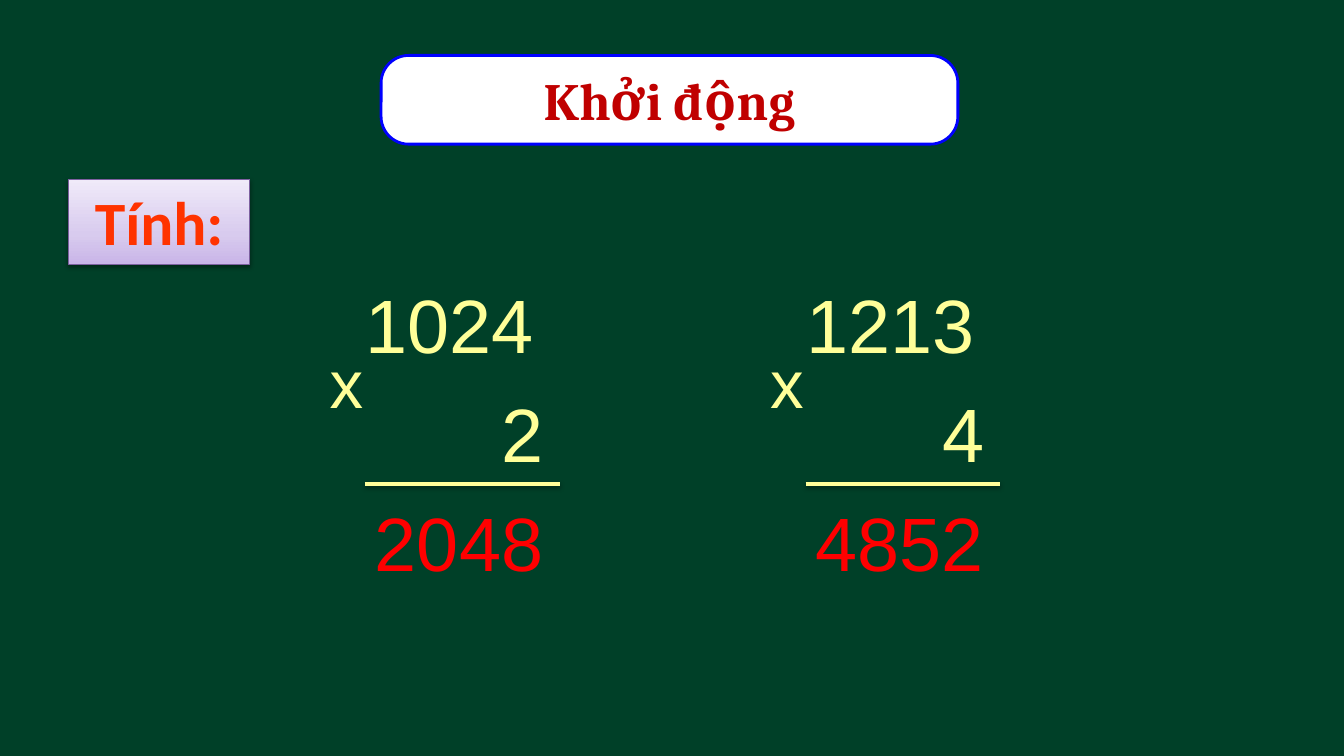
import pptx
import pptx.dml.color
import pptx.enum.shapes
import pptx.enum.text
import pptx.oxml
import pptx.oxml.ns
import pptx.util
from lxml import etree

Inches, Pt = pptx.util.Inches, pptx.util.Pt
ALIGN = pptx.enum.text.PP_ALIGN
ANCHOR = pptx.enum.text.MSO_ANCHOR
SHAPE = pptx.enum.shapes.MSO_SHAPE
qn = pptx.oxml.ns.qn

WIDTH, HEIGHT = 13.33, 7.5
COLUMN_PITCH = 4.37
CHALK = "FFFF99"


def colour(hex_code):
    return pptx.dml.color.RGBColor.from_string(hex_code)


def write(shape, text, size, font, hex_code, align=ALIGN.LEFT, bold=False,
          before=0, anchor=ANCHOR.TOP, wrap=True):
    frame = shape.text_frame
    frame.word_wrap = wrap
    frame.vertical_anchor = anchor
    paragraph = frame.paragraphs[0]
    paragraph.text = text
    paragraph.alignment = align
    paragraph.space_before = Pt(before)
    paragraph.font.size = Pt(size)
    paragraph.font.name = font
    paragraph.font.bold = bold
    paragraph.font.color.rgb = colour(hex_code)


def add_panel(slide, preset, box, line_colour, line_width):
    panel = slide.shapes.add_shape(preset, *map(Inches, box))
    panel.shadow.inherit = False
    panel.line.color.rgb = colour(line_colour)
    panel.line.width = Pt(line_width)
    return panel


def add_shadow(shape, blur, distance, opacity):
    properties = shape._element.spPr
    effects = properties.find(qn("a:effectLst"))
    if effects is None:
        effects = etree.SubElement(properties, qn("a:effectLst"))
    shadow = etree.SubElement(
        effects, qn("a:outerShdw"), blurRad=str(Pt(blur)),
        dist=str(Pt(distance)), dir="5400000", rotWithShape="0")
    black = etree.SubElement(shadow, qn("a:srgbClr"), val="000000")
    etree.SubElement(black, qn("a:alpha"), val=str(opacity * 1000))


def set_gradient(shape, stops, angle):
    shape.fill.gradient()
    shape.fill.gradient_angle = angle
    stop_list = shape._element.spPr.find(qn("a:gradFill")).find(qn("a:gsLst"))
    for stop in list(stop_list):
        stop_list.remove(stop)
    for position, hex_code in stops:
        stop = etree.SubElement(stop_list, qn("a:gs"), pos=str(position * 1000))
        etree.SubElement(stop, qn("a:srgbClr"), val=hex_code)


def add_title(slide, box):
    title = add_panel(slide, SHAPE.ROUNDED_RECTANGLE, box, "0000FF", 2)
    title.adjustments[0] = 0.31
    title.fill.solid()
    title.fill.fore_color.rgb = colour("FFFFFF")
    write(title, "Khởi động", 37.4, "Cambria", "C00000", ALIGN.CENTER,
          bold=True, anchor=ANCHOR.MIDDLE)


def add_task(slide, box):
    task = add_panel(slide, SHAPE.RECTANGLE, box, "7D60A0", 0.75)
    set_gradient(task, [(0, "C9B5E8"), (35, "D8CBEE"), (100, "F0EAF9")], 90)
    add_shadow(task, 3.1, 1.6, 38)
    write(task, "Tính:", 44, "Calibri", "FF3300", ALIGN.CENTER, bold=True,
          before=3)


def add_multiplication(slide, box, multiplicand, multiplier, product):
    left, top, width, height = box

    def add_number(text, x, y, w, h, size=54, hex_code=CHALK, **style):
        number = slide.shapes.add_textbox(
            *map(Inches, (left + x, top + y, w, h)))
        write(number, text, size, "Arial", hex_code, before=5, **style)
        return number

    row = height / 3
    add_number(multiplicand, 0.36, 0, 2.11, 1.01)
    factor = add_number(multiplier, 1.08, row, 1.39, 1.01, align=ALIGN.RIGHT)
    factor.text_frame.margin_right = Inches(0.25)
    add_number("x", 0, 0.63, 0.67, 0.91, size=48)
    rule_y = Inches(top + 2.09)
    rule = slide.shapes.add_connector(
        pptx.enum.shapes.MSO_CONNECTOR.STRAIGHT,
        Inches(left + 0.45), rule_y, Inches(left + width), rule_y)
    rule.line.color.rgb = colour(CHALK)
    rule.line.width = Pt(3)
    add_shadow(rule, 3.1, 1.8, 35)
    add_number(product, 0.45, 2 * row, 1.88, 1.01, hex_code="FF0000",
               wrap=False)


def main():
    deck = pptx.Presentation()
    deck.slide_width, deck.slide_height = Inches(WIDTH), Inches(HEIGHT)
    slide = deck.slides.add_slide(deck.slide_layouts[6])
    slide.background.fill.solid()
    slide.background.fill.fore_color.rgb = colour("004028")

    add_title(slide, (3.78, 0.55, 5.72, 0.88))
    add_task(slide, (0.68, 1.78, 1.8, 0.84))
    exercises = [("1024", "2", "2048"), ("1213", "4", "4852")]
    for column, numbers in enumerate(exercises):
        box = (3.17 + column * COLUMN_PITCH, 2.71, 2.38, 3.24)
        add_multiplication(slide, box, *numbers)

    deck.save("out.pptx")


if __name__ == "__main__":
    main()
